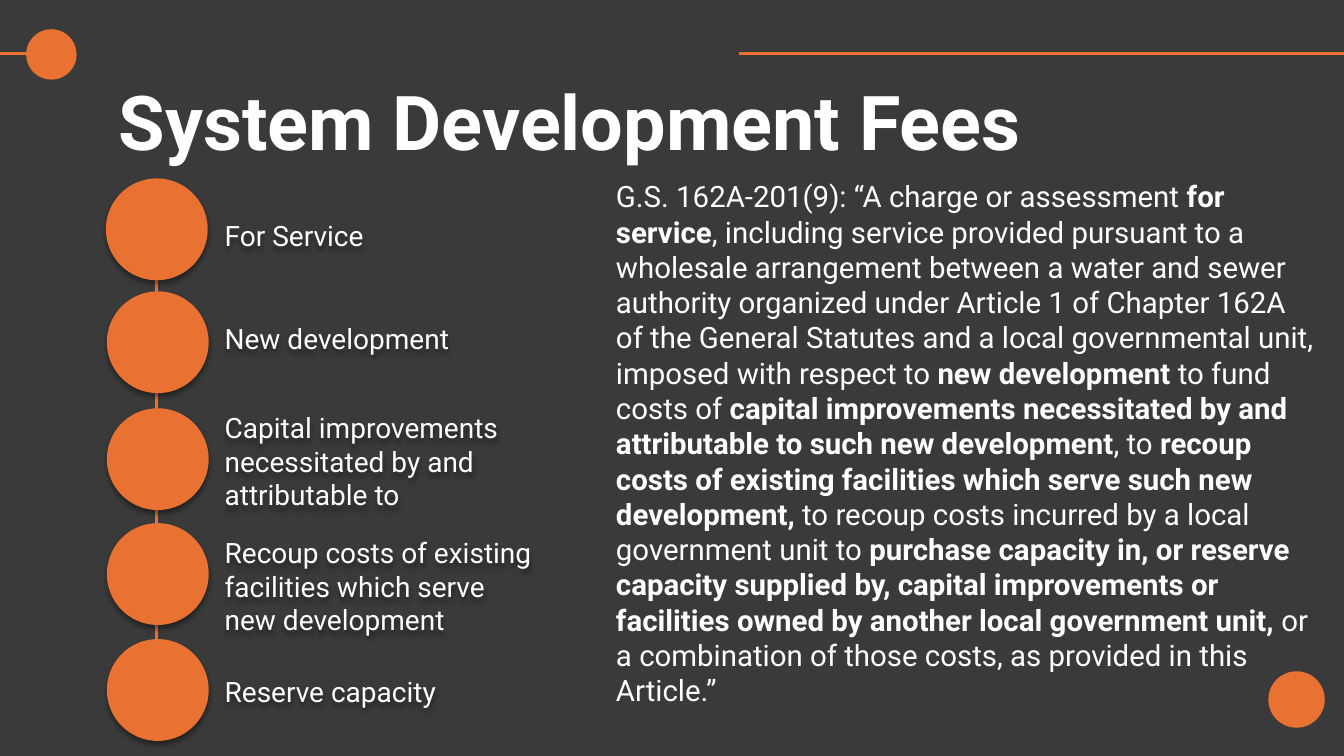
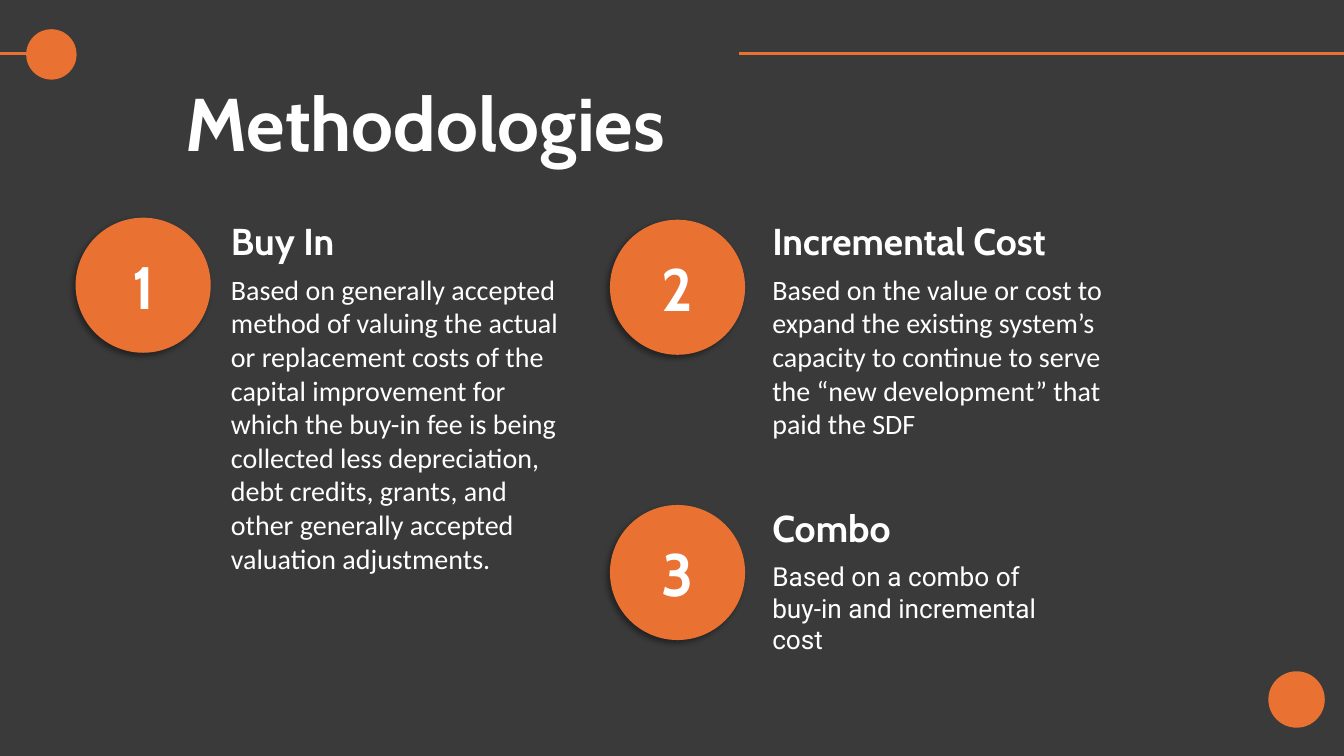
from dataclasses import dataclass

import pptx
import pptx.dml.color
import pptx.enum.shapes
import pptx.enum.text
import pptx.oxml
import pptx.oxml.ns
import pptx.presentation
import pptx.shapes.autoshape
import pptx.slide
import pptx.text.text
import pptx.util

Inches = pptx.util.Inches
Pt = pptx.util.Pt
ALIGN = pptx.enum.text.PP_ALIGN
ANCHOR = pptx.enum.text.MSO_ANCHOR

COLORS = {"background": "3A3A3A", "accent": "E97132", "text": "FFFFFF", "shadow": "000000"}
WIDTH, HEIGHT = 13.33, 7.5
RULE_Y = 0.53
STEP_DIAMETER = 1.01
NUMBER_DIAMETER = 1.34


@dataclass(frozen=True)
class Style:
    font: str
    size: float
    bold: bool = False


@dataclass(frozen=True)
class Box:
    left: float
    top: float
    width: float
    height: float


@dataclass(frozen=True)
class Step:
    label: str
    circle_left: float
    circle_top: float
    label_top: float


@dataclass(frozen=True)
class Method:
    number: str
    heading: str
    body: str
    circle_left: float
    circle_top: float
    text_left: float
    heading_top: float
    heading_width: float
    body_top: float
    body_width: float
    body_style: Style


LABEL = Style("Roboto", 20)
STATUTE = Style("Roboto", 21)
HEADING = Style("Cabin", 26.7, True)
NUMBER = Style("Cabin", 42.7, True)
BODY = Style("Calibri", 20)
COMBO_BODY = Style("Roboto", 18.7)

STEPS = [
    Step("For Service", 1.05, 1.77, 1.94),
    Step("New development", 1.06, 2.89, 2.96),
    Step("Capital improvements necessitated by and attributable to", 1.06, 4.05, 4.18),
    Step("Recoup costs of existing facilities which serve new development", 1.06, 5.19, 5.42),
    Step("Reserve capacity", 1.06, 6.34, 6.46),
]

STATUTE_RUNS = [
    ("G.S. 162A-201(9): “A charge or assessment ", False),
    ("for service", True),
    (", including service provided pursuant to a wholesale arrangement between a water "
     "and sewer authority organized under Article 1 of Chapter 162A of the General "
     "Statutes and a local governmental unit, imposed with respect to ", False),
    ("new development ", True),
    ("to fund costs of ", False),
    ("capital improvements necessitated by and attributable to such new development", True),
    (", to ", False),
    ("recoup costs of existing facilities which serve such new development, ", True),
    ("to recoup costs incurred by a local government unit to ", False),
    ("purchase capacity in, or reserve capacity supplied by, capital improvements or "
     "facilities owned by another local government unit, ", True),
    ("or a combination of those costs, as provided in this Article.”", False),
]

METHODS = [
    Method("1", "Buy In",
           "Based on generally accepted method of valuing the actual or replacement costs "
           "of the capital improvement for which the buy-in fee is being collected less "
           "depreciation, debt credits, grants, and other generally accepted valuation "
           "adjustments.",
           0.75, 2.16, 2.29, 2.16, 2.79, 2.7, 3.39, BODY),
    Method("2", "Incremental Cost",
           "Based on the value or cost to expand the existing system’s capacity to continue "
           "to serve the “new development” that paid the SDF",
           6.05, 2.18, 7.66, 2.16, 5.14, 2.7, 3.39, BODY),
    Method("3", "Combo", "Based on a combo of buy-in and incremental cost",
           6.05, 5.01, 7.66, 5.01, 2.79, 5.56, 2.9, COMBO_BODY),
]


def rgb(name: str) -> pptx.dml.color.RGBColor:
    return pptx.dml.color.RGBColor.from_string(COLORS[name])


def add_run(p: pptx.text.text._Paragraph, text: str, style: Style) -> None:
    r = p.add_run()
    r.text = text
    r.font.name = style.font
    r.font.size = Pt(style.size)
    r.font.bold = style.bold
    r.font.color.rgb = rgb("text")


def format_frame(tf: pptx.text.text.TextFrame, anchor: ANCHOR, inset: bool = False) -> None:
    tf.word_wrap = True
    tf.auto_size = pptx.enum.text.MSO_AUTO_SIZE.NONE
    tf.vertical_anchor = anchor
    side, end = (0.1, 0.05) if inset else (0, 0)
    tf.margin_left = tf.margin_right = Inches(side)
    tf.margin_top = tf.margin_bottom = Inches(end)


def add_shadow(sp: pptx.shapes.autoshape.Shape, angle: int) -> None:
    sp.shadow.inherit = False
    effects = sp.element.spPr.find(pptx.oxml.ns.qn("a:effectLst"))
    effects.append(pptx.oxml.parse_xml(
        f'<a:outerShdw {pptx.oxml.ns.nsdecls("a")} blurRad="{Pt(4)}" dist="{Pt(3)}" '
        f'dir="{angle * 60000}" algn="ctr" rotWithShape="0">'
        f'<a:srgbClr val="{COLORS["shadow"]}"><a:alpha val="40000"/></a:srgbClr>'
        f'</a:outerShdw>'))


def add_circle(s: pptx.slide.Slide, left: float, top: float,
               diameter: float) -> pptx.shapes.autoshape.Shape:
    sp = s.shapes.add_shape(pptx.enum.shapes.MSO_SHAPE.OVAL, Inches(left), Inches(top),
                            Inches(diameter), Inches(diameter))
    sp.shadow.inherit = False
    sp.fill.solid()
    sp.fill.fore_color.rgb = rgb("accent")
    sp.line.fill.background()
    return sp


def add_line(s: pptx.slide.Slide, x1: float, y1: float, x2: float, y2: float) -> None:
    line = s.shapes.add_connector(pptx.enum.shapes.MSO_CONNECTOR.STRAIGHT,
                                  Inches(x1), Inches(y1), Inches(x2), Inches(y2))
    line.line.color.rgb = rgb("accent")
    line.line.width = Pt(2)
    line.element.spPr.append(
        pptx.oxml.parse_xml(f'<a:effectLst {pptx.oxml.ns.nsdecls("a")}/>'))


def add_text(s: pptx.slide.Slide, box: Box, runs: list[tuple[str, Style]],
             anchor: ANCHOR = ANCHOR.TOP, inset: bool = False) -> pptx.shapes.autoshape.Shape:
    sp = s.shapes.add_textbox(Inches(box.left), Inches(box.top),
                              Inches(box.width), Inches(box.height))
    format_frame(sp.text_frame, anchor, inset)
    for text, style in runs:
        add_run(sp.text_frame.paragraphs[0], text, style)
    return sp


def add_slide(prs: pptx.presentation.Presentation, title: str, box: Box,
              style: Style) -> pptx.slide.Slide:
    s = prs.slides.add_slide(prs.slide_layouts.get_by_name("Title Only"))
    add_circle(s, 12.58, 6.66, 0.56)
    add_circle(s, 0.26, 0.29, 0.5)
    add_line(s, 0.56, RULE_Y, 0, RULE_Y)
    add_line(s, WIDTH, RULE_Y, 7.33, RULE_Y)
    sp = s.shapes.title
    sp.left, sp.top = Inches(box.left), Inches(box.top)
    sp.width, sp.height = Inches(box.width), Inches(box.height)
    format_frame(sp.text_frame, ANCHOR.MIDDLE)
    p = sp.text_frame.paragraphs[0]
    p.alignment = ALIGN.LEFT
    p.line_spacing = 0.9
    add_run(p, title, style)
    return s


def add_step(s: pptx.slide.Slide, step: Step) -> None:
    add_shadow(add_circle(s, step.circle_left, step.circle_top, STEP_DIAMETER), 90)
    label = add_text(s, Box(2.13, step.label_top, 3.33, 0.79), [(step.label, LABEL)],
                     ANCHOR.MIDDLE, inset=True)
    add_shadow(label, 90)


def add_method(s: pptx.slide.Slide, method: Method) -> None:
    sp = add_circle(s, method.circle_left, method.circle_top, NUMBER_DIAMETER)
    add_shadow(sp, 135)
    format_frame(sp.text_frame, ANCHOR.MIDDLE)
    p = sp.text_frame.paragraphs[0]
    p.alignment = ALIGN.CENTER
    add_run(p, method.number, NUMBER)
    add_text(s, Box(method.text_left, method.heading_top, method.heading_width, 0.44),
             [(method.heading, HEADING)])
    add_text(s, Box(method.text_left, method.body_top, method.body_width, 1.01),
             [(method.body, method.body_style)])


def build_fees(prs: pptx.presentation.Presentation) -> None:
    s = add_slide(prs, "System Development Fees", Box(1.18, 0.89, 9.54, 0.72),
                  Style("Roboto", 54, True))
    add_line(s, 1.55, 2.29, 1.55, 7.13)
    for step in STEPS:
        add_step(s, step)
    add_text(s, Box(6.11, 1.77, 6.96, 0.44),
             [(text, Style(STATUTE.font, STATUTE.size, bold)) for text, bold in STATUTE_RUNS])


def build_methodologies(prs: pptx.presentation.Presentation) -> None:
    s = add_slide(prs, "Methodologies", Box(1.84, 0.9, 8.72, 0.72),
                  Style("Cabin", 53.3, True))
    for method in METHODS:
        add_method(s, method)


def main() -> None:
    prs = pptx.Presentation()
    prs.slide_width, prs.slide_height = Inches(WIDTH), Inches(HEIGHT)
    fill = prs.slide_master.background.fill
    fill.solid()
    fill.fore_color.rgb = rgb("background")
    build_fees(prs)
    build_methodologies(prs)
    prs.save("out.pptx")


if __name__ == "__main__":
    main()
